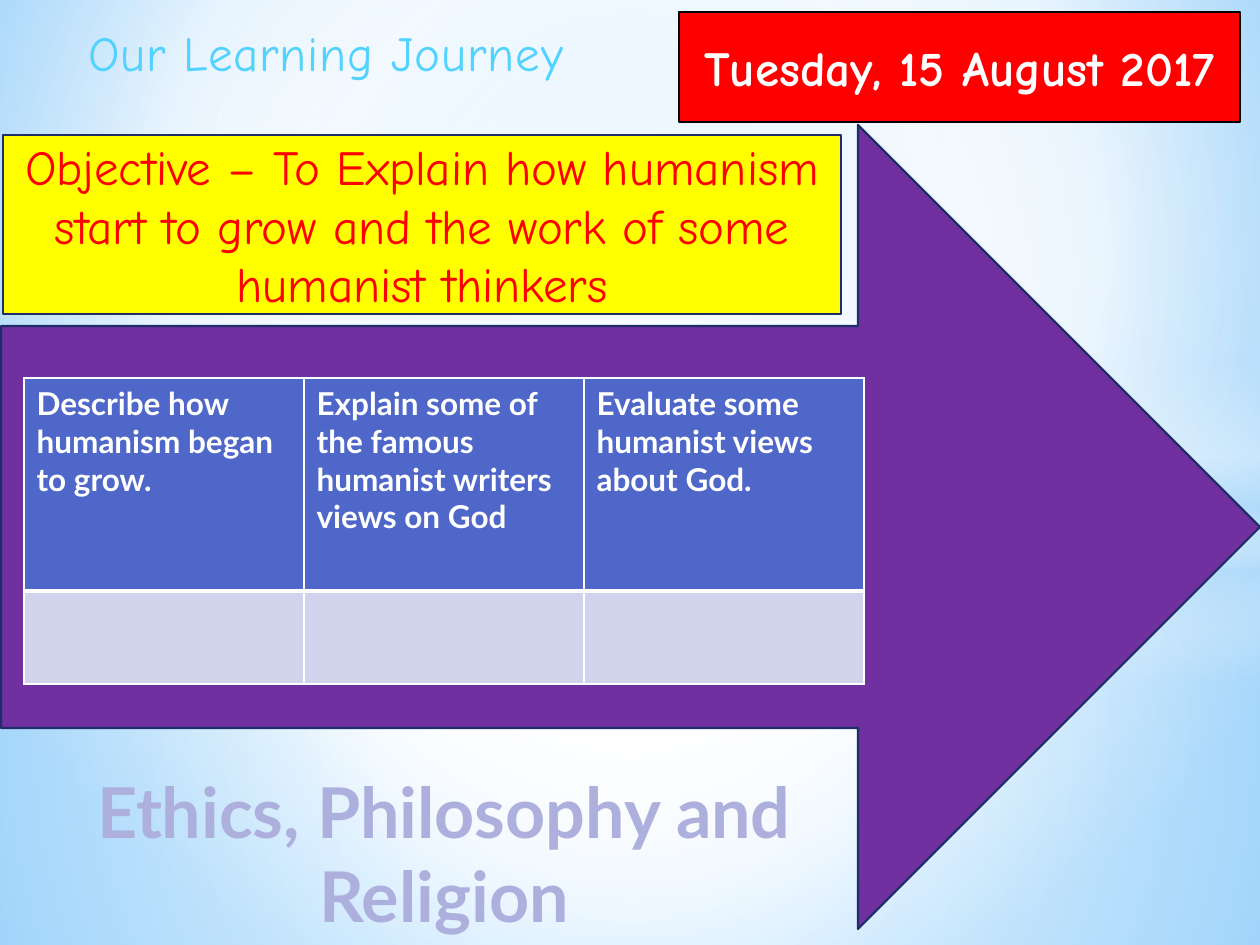
"""Build the learning journey slide with its dated objective and task table."""
from typing import NamedTuple

from lxml import etree
from pptx import Presentation
from pptx.dml.color import RGBColor
from pptx.enum.shapes import MSO_SHAPE
from pptx.enum.text import MSO_ANCHOR, PP_ALIGN
from pptx.oxml.ns import qn
from pptx.util import Emu, Pt

RECTANGLE, OVAL, ARROW = MSO_SHAPE.RECTANGLE, MSO_SHAPE.OVAL, MSO_SHAPE.RIGHT_ARROW
TOP, MIDDLE = MSO_ANCHOR.TOP, MSO_ANCHOR.MIDDLE
LEFT, CENTER = PP_ALIGN.LEFT, PP_ALIGN.CENTER

EMU_PER_PX = 914400 / 126
TITLE_ONLY = 5
HAND_FONT, PLAIN_FONT = "Comic Neue", "Lato"

WHITE = RGBColor(0xFF, 0xFF, 0xFF)
BLACK = RGBColor(0x00, 0x00, 0x00)
RED = RGBColor(0xFF, 0x00, 0x00)
YELLOW = RGBColor(0xFF, 0xFF, 0x00)
PURPLE = RGBColor(0x70, 0x30, 0xA0)
NAVY = RGBColor(0x1F, 0x2E, 0x69)
CYAN = RGBColor(0x52, 0xD2, 0xFF)
LILAC = RGBColor(0xAD, 0xB0, 0xDD)
HEADER_BLUE = RGBColor(0x4E, 0x67, 0xC8)
ROW_BLUE = RGBColor(0xD0, 0xD3, 0xEB)
SKY = RGBColor(0x9E, 0xD5, 0xFF)
DEEP_SKY = RGBColor(0x5B, 0xB9, 0xFF)
PALE_SKY = RGBColor(0xB4, 0xDC, 0xFA)


class Box(NamedTuple):
    left: int
    top: int
    width: int
    height: int


class Stop(NamedTuple):
    position: int
    color: RGBColor
    opacity: int = 100


class Glow(NamedTuple):
    preset: MSO_SHAPE
    box: Box
    stops: tuple[Stop, ...]
    focus: tuple[int, ...] | None = (50, 50, 50, 50)


class Banner(NamedTuple):
    preset: MSO_SHAPE
    box: Box
    fill: RGBColor
    line: RGBColor
    line_width: float
    text: str = ""
    color: RGBColor = WHITE
    bold: bool = False


BACKGROUND_STOPS = (Stop(0, SKY), Stop(60, WHITE), Stop(100, DEEP_SKY))
GLOWS = (
    Glow(RECTANGLE, Box(0, 533, 1260, 412),
         (Stop(0, WHITE, 91), Stop(37, WHITE, 76), Stop(100, PALE_SKY, 79))),
    Glow(RECTANGLE, Box(0, 0, 1260, 533),
         (Stop(0, WHITE, 89), Stop(48, WHITE, 62), Stop(100, PALE_SKY, 79))),
    Glow(RECTANGLE, Box(0, 365, 1260, 315),
         (Stop(0, WHITE, 0), Stop(29, WHITE, 30), Stop(45, PALE_SKY, 40),
          Stop(55, WHITE, 26), Stop(65, PALE_SKY, 60), Stop(100, WHITE, 0)), None),
    Glow(OVAL, Box(0, 220, 1260, 703), (Stop(0, WHITE), Stop(54, WHITE, 0))),
)
BANNERS = (
    Banner(RECTANGLE, Box(679, 12, 561, 110), RED, BLACK, 0.75,
           "Tuesday, 15 August 2017", WHITE, True),
    Banner(RECTANGLE, Box(3, 135, 838, 179), YELLOW, NAVY, 1.25,
           "Objective – To Explain how humanism start to grow "
           "and the work of some humanist thinkers", RED),
    Banner(ARROW, Box(1, 125, 1259, 804), PURPLE, NAVY, 1.25),
)
TITLE_BOX = Box(1, 16, 650, 72)
SUBJECT_BOX = Box(0, 762, 888, 183)
TABLE_BOX = Box(24, 378, 840, 306)
HEADER_HEIGHT = 213
TASKS = (
    "Describe how humanism began to grow.",
    "Explain some of the famous humanist writers views on God",
    "Evaluate some humanist views about God.",
)


def px(length: float) -> Emu:
    """Turn slide pixels into EMU."""
    return Emu(round(length * EMU_PER_PX))


def place(box: Box) -> list[Emu]:
    """Turn a box into left, top, width and height."""
    return [px(length) for length in box]


def write(frame, text: str, *, size: int, font: str, color: RGBColor,
          bold: bool = False, align=CENTER, anchor=TOP, spacing: int = 0) -> None:
    """Write one formatted paragraph into a text frame."""
    frame.word_wrap = True
    frame.vertical_anchor = anchor
    paragraph = frame.paragraphs[0]
    paragraph.alignment = align
    run = paragraph.add_run()
    run.text = text
    run.font.size = Pt(size)
    run.font.name = font
    run.font.bold = bold
    run.font.color.rgb = color
    if spacing:
        run.font._element.set("spc", str(spacing))


def apply_gradient(solid_fill, stops: tuple[Stop, ...], focus: tuple[int, ...] | None) -> None:
    """Replace a solid fill by a radial gradient, or a vertical one without focus."""
    gradient = etree.Element(qn("a:gradFill"), rotWithShape="1")
    stop_list = etree.SubElement(gradient, qn("a:gsLst"))
    for stop in stops:
        entry = etree.SubElement(stop_list, qn("a:gs"), pos=str(stop.position * 1000))
        color = etree.SubElement(entry, qn("a:srgbClr"), val=str(stop.color))
        if stop.opacity < 100:
            etree.SubElement(color, qn("a:alpha"), val=str(stop.opacity * 1000))
    if focus:
        radial = etree.SubElement(gradient, qn("a:path"), {"path": "circle"})
        edges = {side: str(edge * 1000) for side, edge in zip("ltrb", focus)}
        etree.SubElement(radial, qn("a:fillToRect"), edges)
    else:
        etree.SubElement(gradient, qn("a:lin"), ang="5400000", scaled="0")
    solid_fill.getparent().replace(solid_fill, gradient)


def draw_glow(slide, glow: Glow) -> None:
    """Draw one translucent backdrop shape."""
    shape = slide.shapes.add_shape(glow.preset, *place(glow.box))
    shape.shadow.inherit = False
    shape.line.fill.background()
    shape.fill.solid()
    apply_gradient(shape.element.xpath("./p:spPr/a:solidFill")[0], glow.stops, glow.focus)


def draw_banner(slide, banner: Banner) -> None:
    """Draw one outlined shape with its text, if any."""
    shape = slide.shapes.add_shape(banner.preset, *place(banner.box))
    shape.shadow.inherit = False
    shape.fill.solid()
    shape.fill.fore_color.rgb = banner.fill
    shape.line.color.rgb = banner.line
    shape.line.width = Pt(banner.line_width)
    if banner.text:
        write(shape.text_frame, banner.text, size=28, font=HAND_FONT,
              color=banner.color, bold=banner.bold, anchor=MIDDLE)


def style_cell(cell, fill: RGBColor, top: int, bottom: int) -> None:
    """Fill a cell and give it white borders."""
    cell.fill.solid()
    cell.fill.fore_color.rgb = fill
    properties = cell._tc.get_or_add_tcPr()
    widths = {"a:lnL": 1, "a:lnR": 1, "a:lnT": top, "a:lnB": bottom}
    for index, (side, width) in enumerate(widths.items()):
        border = etree.Element(qn(side), w=str(Pt(width)))
        solid = etree.SubElement(border, qn("a:solidFill"))
        etree.SubElement(solid, qn("a:srgbClr"), val=str(WHITE))
        properties.insert(index, border)


def draw_table(slide) -> None:
    """Draw the task table with an empty row below the tasks."""
    table = slide.shapes.add_table(2, len(TASKS), *place(TABLE_BOX)).table
    table.rows[0].height = px(HEADER_HEIGHT)
    table.rows[1].height = px(TABLE_BOX.height - HEADER_HEIGHT)
    for column, task in enumerate(TASKS):
        header = table.cell(0, column)
        style_cell(header, HEADER_BLUE, 1, 3)
        write(header.text_frame, task, size=18, font=PLAIN_FONT, color=WHITE,
              bold=True, align=LEFT)
        style_cell(table.cell(1, column), ROW_BLUE, 3, 1)


def main() -> None:
    """Build and save the presentation."""
    presentation = Presentation()
    presentation.slide_width, presentation.slide_height = px(1260), px(945)
    slide = presentation.slides.add_slide(presentation.slide_layouts[TITLE_ONLY])
    slide.background.fill.solid()
    apply_gradient(slide.element.xpath(".//p:bgPr/a:solidFill")[0],
                   BACKGROUND_STOPS, (20, 10, 20, 60))
    for glow in GLOWS:
        draw_glow(slide, glow)
    for banner in BANNERS:
        draw_banner(slide, banner)
    title = slide.shapes.title
    title.left, title.top, title.width, title.height = place(TITLE_BOX)
    write(title.text_frame, "Our Learning Journey", size=28, font=HAND_FONT,
          color=CYAN, spacing=50)
    slide.shapes._spTree.append(title.element)
    subject = slide.shapes.add_textbox(*place(SUBJECT_BOX))
    write(subject.text_frame, "Ethics, Philosophy and Religion", size=40,
          font=PLAIN_FONT, color=LILAC, bold=True)
    draw_table(slide)
    presentation.save("out.pptx")


if __name__ == "__main__":
    main()
